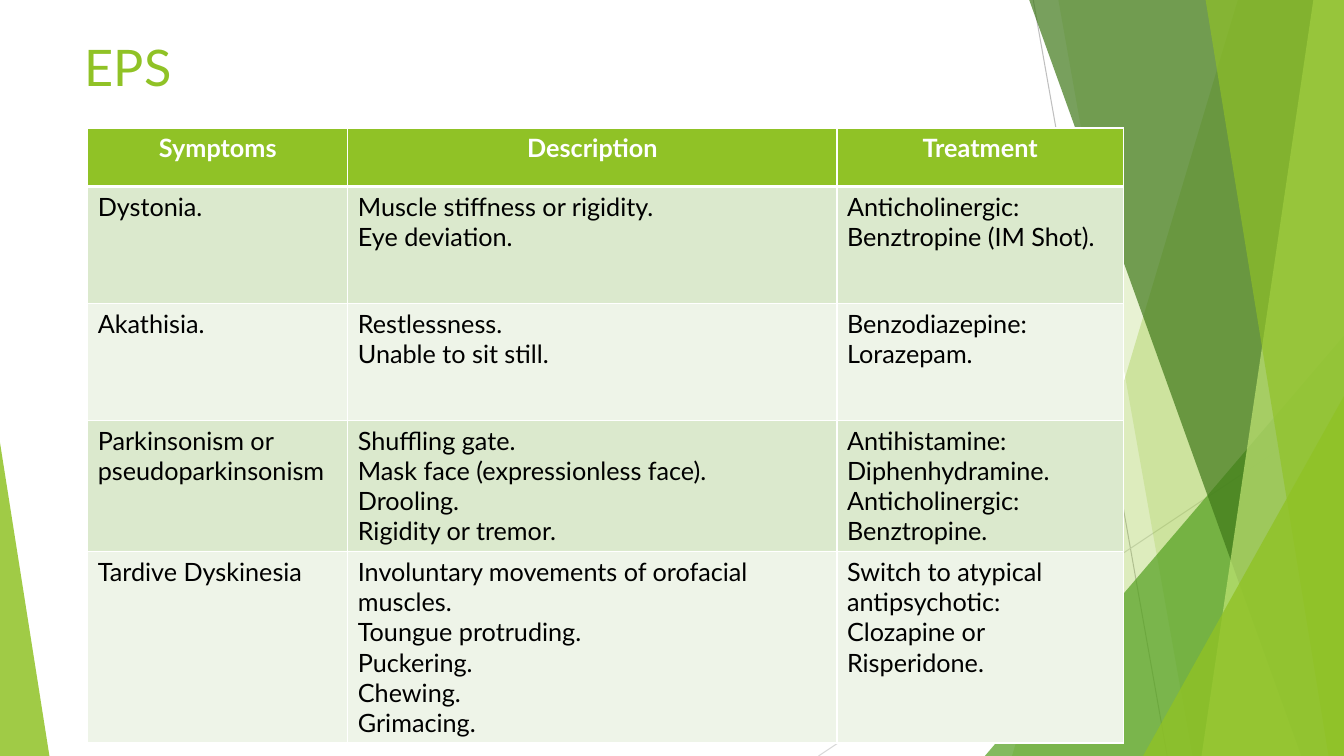
import lxml.etree
import pptx
import pptx.dml.color
import pptx.enum.shapes
import pptx.enum.text
import pptx.oxml.ns
import pptx.util

COLOURS = {
    "white": "FFFFFF", "black": "000000", "lime": "90C226", "green": "54A021",
    "forest": "3F7819", "pale": "C0E474", "grey": "BFBFBF", "silver": "D9D9D9",
    "odd": "DBE9CD", "even": "EEF4E8",
}
HEADINGS = ("Symptoms", "Description", "Treatment")
SIDE_EFFECTS = (
    ("Dystonia.",
     "Muscle stiffness or rigidity.\nEye deviation.",
     "Anticholinergic: Benztropine (IM Shot)."),
    ("Akathisia.",
     "Restlessness.\nUnable to sit still.",
     "Benzodiazepine: Lorazepam."),
    ("Parkinsonism or pseudoparkinsonism",
     "Shuffling gate.\nMask face (expressionless face).\nDrooling.\nRigidity or tremor.",
     "Antihistamine: Diphenhydramine.\nAnticholinergic: Benztropine."),
    ("Tardive Dyskinesia",
     "Involuntary movements of orofacial muscles.\nToungue protruding.\n"
     "Puckering.\nChewing.\nGrimacing.",
     "Switch to atypical antipsychotic: Clozapine or Risperidone."),
)


def qn(tag):
    return pptx.oxml.ns.qn(tag)


def rgb(colour):
    return pptx.dml.color.RGBColor.from_string(COLOURS[colour])


class FacetSlide:
    """Draws one slide on a grid of 100 columns by 100 rows."""

    def __init__(self, deck):
        self.column = deck.slide_width / 100
        self.row = deck.slide_height / 100
        self.slide = deck.slides.add_slide(deck.slide_layouts[5])
        self.shapes = self.slide.shapes

    def x(self, columns):
        return round(columns * self.column)

    def y(self, rows):
        return round(rows * self.row)

    def style_text(self, frame, colour, size, bold=False, align="LEFT"):
        style = {"name": "Lato", "size": pptx.util.Pt(size), "bold": bold}
        for paragraph in frame.paragraphs:
            paragraph.alignment = pptx.enum.text.PP_ALIGN[align]
            for run in paragraph.runs:
                for attribute, value in style.items():
                    setattr(run.font, attribute, value)
                run.font.color.rgb = rgb(colour)

    def tint(self, shape, colour, opacity):
        shape.shadow.inherit = False
        shape.fill.solid()
        shape.fill.fore_color.rgb = rgb(colour)
        shape.line.fill.background()
        fill = next(shape.element.iter(qn("a:srgbClr")))
        lxml.etree.SubElement(fill, qn("a:alpha"), val=str(opacity * 1000))

    def line(self, start, end, colour):
        ray = self.shapes.add_connector(
            pptx.enum.shapes.MSO_CONNECTOR.STRAIGHT,
            self.x(start[0]), self.y(start[1]), self.x(end[0]), self.y(end[1]))
        ray.line.color.rgb = rgb(colour)
        ray.line.width = pptx.util.Pt(0.75)
        lxml.etree.SubElement(ray.element.spPr, qn("a:effectLst"))

    def panel(self, top, bottom, colour, opacity):
        outline = self.shapes.build_freeform(self.x(top), 0)
        corners = ((100, 0), (100, 100), (bottom, 100))
        outline.add_line_segments([(self.x(c), self.y(r)) for c, r in corners])
        self.tint(outline.convert_to_shape(), colour, opacity)

    def wedge(self, left, top, width, peak, colour, opacity):
        corner = self.shapes.add_shape(
            pptx.enum.shapes.MSO_SHAPE.ISOSCELES_TRIANGLE,
            self.x(left), self.y(top), self.x(width), self.y(100 - top))
        corner.adjustments[0] = peak
        self.tint(corner, colour, opacity)

    def title(self, text, left, top, width, height):
        heading = self.shapes.title
        place = {"left": self.x(left), "top": self.y(top),
                 "width": self.x(width), "height": self.y(height)}
        for attribute, value in place.items():
            setattr(heading, attribute, value)
        frame = heading.text_frame
        frame.text = text
        layout = {"vertical_anchor": pptx.enum.text.MSO_ANCHOR.TOP,
                  "auto_size": pptx.enum.text.MSO_AUTO_SIZE.NONE,
                  "word_wrap": True}
        for attribute, value in layout.items():
            setattr(frame, attribute, value)
        self.style_text(frame, "lime", 36)

    def borders(self, cell, top, bottom):
        properties = cell._tc.get_or_add_tcPr()
        for side, points in {"L": 1, "R": 1, "T": top, "B": bottom}.items():
            edge = lxml.etree.SubElement(
                properties, qn("a:ln" + side), w=str(pptx.util.Pt(points)))
            fill = lxml.etree.SubElement(edge, qn("a:solidFill"))
            lxml.etree.SubElement(fill, qn("a:srgbClr"), val=COLOURS["white"])

    def table(self, records, left, top, widths, heights):
        grid = self.shapes.add_table(
            len(records), len(widths), self.x(left), self.y(top),
            self.x(sum(widths)), self.y(sum(heights))).table
        for column, width in zip(grid.columns, widths):
            column.width = self.x(width)
        for row, height in zip(grid.rows, heights):
            row.height = self.y(height)
        for r, record in enumerate(records):
            header = r == 0
            band = "lime" if header else ("even", "odd")[r % 2]
            for c, text in enumerate(record):
                cell = grid.cell(r, c)
                cell.text = text
                self.borders(cell, 3 if r == 1 else 1, 3 if header else 1)
                cell.fill.solid()
                cell.fill.fore_color.rgb = rgb(band)
                self.style_text(cell.text_frame, "white" if header else "black",
                                18, header, "CENTER" if header else "LEFT")


def main():
    deck = pptx.Presentation()
    deck.slide_width = pptx.util.Inches(13.33)
    deck.slide_height = pptx.util.Inches(7.5)
    eps = FacetSlide(deck)
    eps.line((76.88, 0), (86.85, 100), "grey")
    eps.line((100, 53.73), (60.9, 100), "silver")
    eps.panel(92.1, 75.3, "lime", 30)
    eps.panel(78.75, 88.72, "lime", 20)
    eps.wedge(73.28, 44.4, 26.72, 1, "green", 72)
    eps.panel(76.58, 96.82, "forest", 70)
    eps.panel(97.72, 89.4, "pale", 70)
    eps.panel(89.7, 98.85, "lime", 65)
    eps.wedge(85.05, 52.4, 14.95, 1, "lime", 80)
    eps.wedge(0, 58.53, 3.68, 0, "lime", 85)
    eps.title("EPS", 5.55, 4.13, 70.5, 19.2)
    eps.table((HEADINGS, *SIDE_EFFECTS), 6.53, 16.93,
              (19.35, 36.4, 21.3), (7.73, *[15.47] * len(SIDE_EFFECTS)))
    deck.save("out.pptx")


if __name__ == "__main__":
    main()
